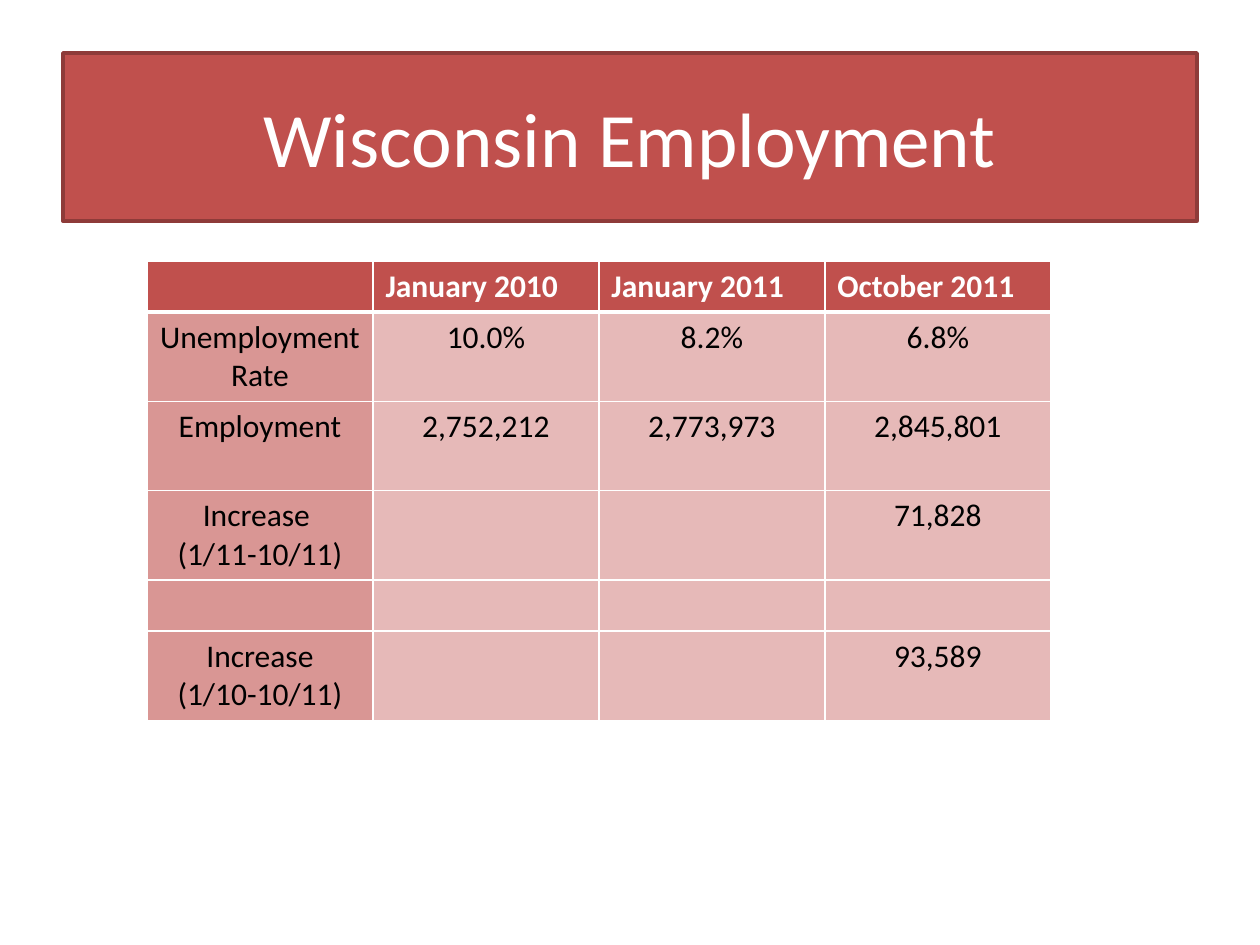
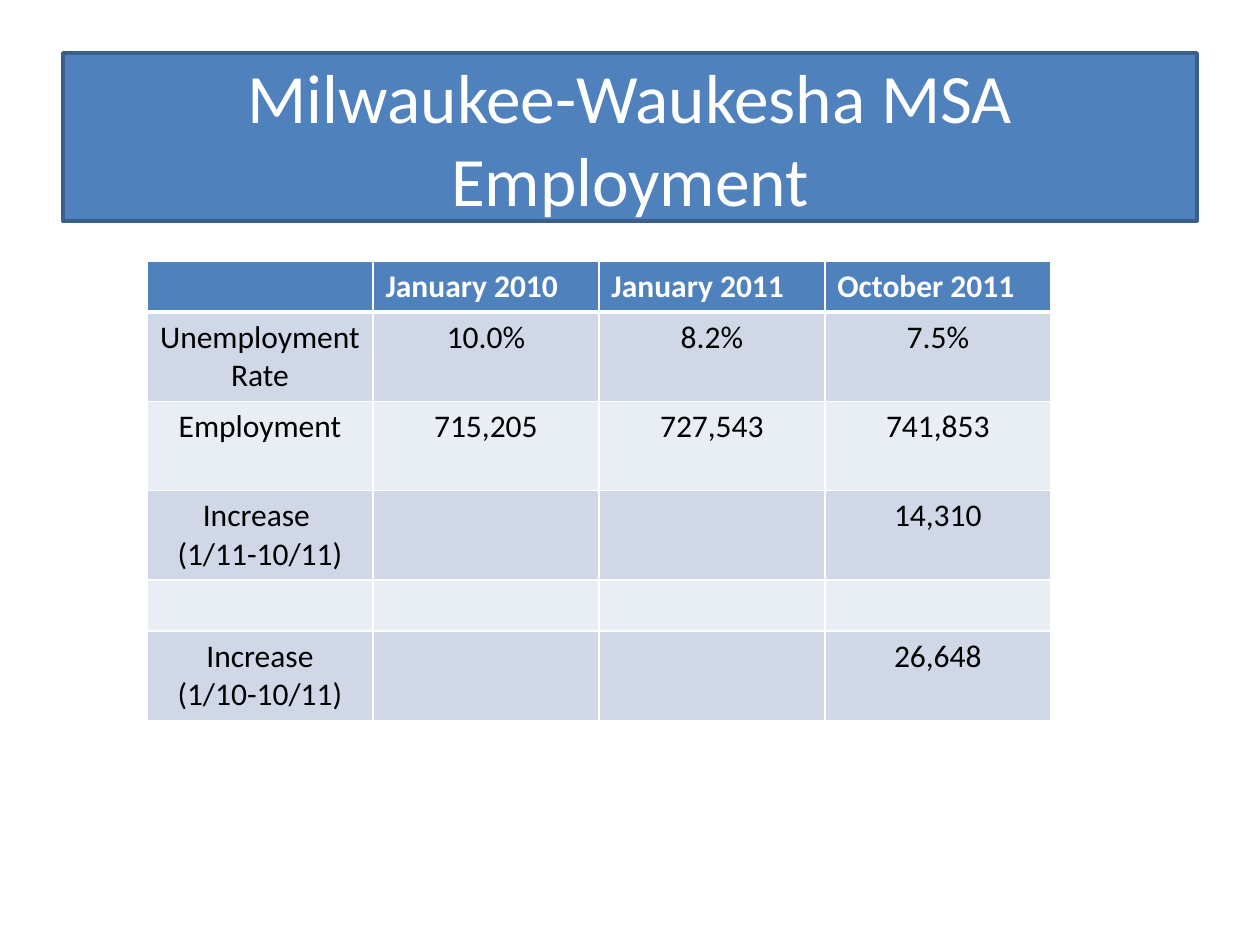
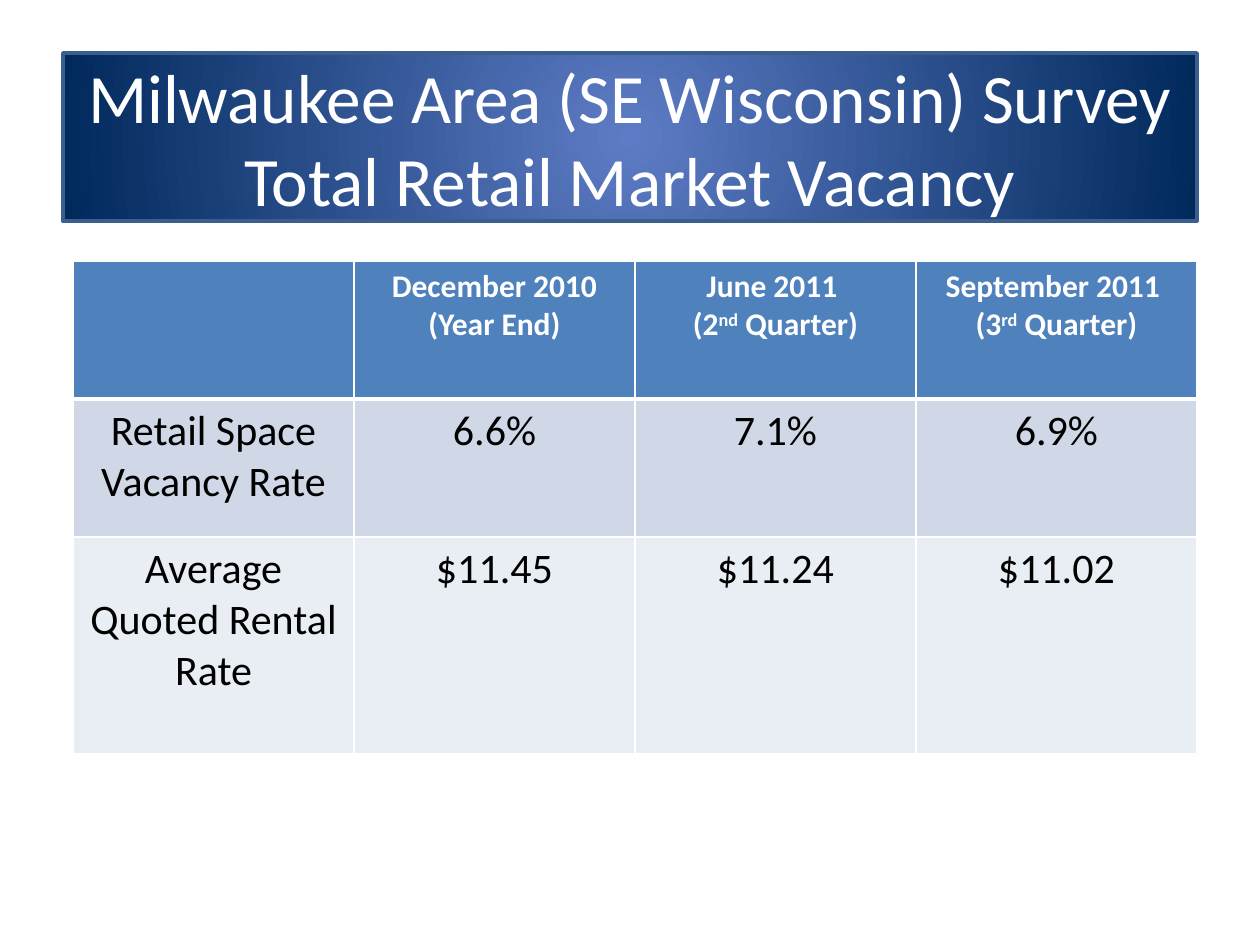
from dataclasses import dataclass
from typing import Optional

import lxml.etree
import pptx
import pptx.dml.color
import pptx.enum.text
import pptx.oxml.ns
import pptx.util

RGBColor = pptx.dml.color.RGBColor
Align = pptx.enum.text.PP_ALIGN
qn = pptx.oxml.ns.qn

WHITE = RGBColor(0xFF, 0xFF, 0xFF)
BLACK = RGBColor(0x00, 0x00, 0x00)
RED = RGBColor(0xC0, 0x50, 0x4D)
DARK_RED = RGBColor(0x8E, 0x3B, 0x39)
ROSE = RGBColor(0xD9, 0x96, 0x94)
PALE_ROSE = RGBColor(0xE6, 0xB9, 0xB8)
BLUE = RGBColor(0x4F, 0x81, 0xBD)
DARK_BLUE = RGBColor(0x3A, 0x5F, 0x8C)
MIST = RGBColor(0xD0, 0xD8, 0xE8)
PALE_MIST = RGBColor(0xE9, 0xED, 0xF4)
GLOW = RGBColor(0x5E, 0x7C, 0xC5)
NAVY = RGBColor(0x00, 0x29, 0x5C)

FONT = "Calibri"
PX_PER_INCH = 126
HEADER_SIZE = 18
TITLE_ONLY = 5
TABLE_TOP = 261
RAISE_MARK = "^"

Row = tuple[str, ...]


@dataclass(frozen=True)
class Box:
    left: int
    top: int
    width: int
    height: int


@dataclass(frozen=True)
class Scheme:
    header: RGBColor
    outline: RGBColor
    label_bands: tuple[RGBColor, ...]
    value_bands: tuple[RGBColor, ...]


@dataclass(frozen=True)
class DataTable:
    left: int
    width: int
    row_heights: tuple[int, ...]
    rows: tuple[Row, ...]
    body_size: int
    header_align: Align


@dataclass(frozen=True)
class Page:
    title: str
    title_size: float
    scheme: Scheme
    table: DataTable
    glow: Optional[tuple[RGBColor, RGBColor]] = None


TITLE_BOX = Box(63, 53, 1134, 168)
RED_SCHEME = Scheme(RED, DARK_RED, (ROSE,), (PALE_ROSE,))
BLUE_SCHEME = Scheme(BLUE, DARK_BLUE, (MIST, PALE_MIST), (MIST, PALE_MIST))


def px(length: int) -> pptx.util.Emu:
    return pptx.util.Emu(round(length * 914400 / PX_PER_INCH))


def employment_table(rates: Row, employed: Row, recent: str, total: str) -> DataTable:
    rows = (
        ("", "January 2010", "January 2011", "October 2011"),
        ("Unemployment Rate", *rates),
        ("Employment", *employed),
        ("Increase \n(1/11-10/11)", "", "", recent),
        ("", "", "", ""),
        ("Increase\n(1/10-10/11)", "", "", total),
    )
    return DataTable(147, 904, (51, 89, 89, 89, 51, 89), rows, 18, Align.LEFT)


RETAIL_TABLE = DataTable(
    73,
    1124,
    (138, 138, 217),
    (
        ("", "December 2010\n(Year End)", "June 2011 \n(2^nd^ Quarter)",
         "September 2011 \n(3^rd^ Quarter)"),
        ("Retail Space Vacancy Rate", "6.6%", "7.1%", "6.9%"),
        ("Average Quoted Rental Rate", "$11.45", "$11.24", "$11.02"),
    ),
    24,
    Align.CENTER,
)

PAGES = (
    Page(
        "Wisconsin Employment", 44, RED_SCHEME,
        employment_table(("10.0%", "8.2%", "6.8%"),
                         ("2,752,212", "2,773,973", "2,845,801"), "71,828", "93,589"),
    ),
    Page(
        "Milwaukee-Waukesha MSA Employment", 39.6, BLUE_SCHEME,
        employment_table(("10.0%", "8.2%", "7.5%"),
                         ("715,205", "727,543", "741,853"), "14,310", "26,648"),
    ),
    Page(
        "Milwaukee Area (SE Wisconsin) Survey Total Retail Market Vacancy", 39.6,
        BLUE_SCHEME, RETAIL_TABLE, (GLOW, NAVY),
    ),
)


def write(frame, text: str, size: float, color: RGBColor, bold: bool, align: Align) -> None:
    for line_index, line in enumerate(text.split("\n")):
        para = frame.add_paragraph() if line_index else frame.paragraphs[0]
        para.alignment = align
        for part_index, part in enumerate(line.split(RAISE_MARK)):
            if not part:
                continue
            span = para.add_run()
            span.text = part
            span.font.name = FONT
            span.font.size = pptx.util.Pt(size)
            span.font.bold = bold
            span.font.color.rgb = color
            if part_index % 2:
                span.font._element.set("baseline", "30000")


def fill_radial(fill, colors: tuple[RGBColor, RGBColor]) -> None:
    fill.gradient()
    for stop, color, position in zip(fill.gradient_stops, colors, (0, 1)):
        stop.color.rgb = color
        stop.position = position
    linear = next(fill._xPr.iter(qn("a:lin")))
    circle = lxml.etree.Element(qn("a:path"), {"path": "circle"})
    sides = dict.fromkeys("ltrb", "50000")
    lxml.etree.SubElement(circle, qn("a:fillToRect"), sides)
    linear.getparent().replace(linear, circle)


def draw_title(title, page: Page) -> None:
    title.left, title.top = px(TITLE_BOX.left), px(TITLE_BOX.top)
    title.width, title.height = px(TITLE_BOX.width), px(TITLE_BOX.height)
    if page.glow:
        fill_radial(title.fill, page.glow)
    else:
        title.fill.solid()
        title.fill.fore_color.rgb = page.scheme.header
    title.line.color.rgb = page.scheme.outline
    title.line.width = pptx.util.Pt(2)
    frame = title.text_frame
    frame.auto_size = pptx.enum.text.MSO_AUTO_SIZE.NONE
    frame.vertical_anchor = pptx.enum.text.MSO_ANCHOR.MIDDLE
    write(frame, page.title, page.title_size, WHITE, False, Align.CENTER)


def draw_borders(cell, row_index: int) -> None:
    properties = cell._tc.get_or_add_tcPr()
    widths = {"L": 1, "R": 1, "T": 3 if row_index == 1 else 1, "B": 1 if row_index else 3}
    for side, width in widths.items():
        border = lxml.etree.SubElement(
            properties, qn(f"a:ln{side}"), {"w": str(pptx.util.Pt(width))})
        paint = lxml.etree.SubElement(border, qn("a:solidFill"))
        lxml.etree.SubElement(paint, qn("a:srgbClr"), {"val": str(WHITE)})


def cell_color(scheme: Scheme, row_index: int, column_index: int) -> RGBColor:
    if row_index == 0:
        return scheme.header
    bands = scheme.value_bands if column_index else scheme.label_bands
    return bands[(row_index - 1) % len(bands)]


def draw_table(slide, data: DataTable, scheme: Scheme) -> None:
    column_count = len(data.rows[0])
    table = slide.shapes.add_table(
        len(data.rows), column_count, px(data.left), px(TABLE_TOP),
        px(data.width), px(sum(data.row_heights))).table
    table.first_row = False
    table.horz_banding = False
    for column in table.columns:
        column.width = px(data.width // column_count)
    for row_index, (row, height) in enumerate(zip(data.rows, data.row_heights)):
        table.rows[row_index].height = px(height)
        is_header = row_index == 0
        for column_index, text in enumerate(row):
            cell = table.cell(row_index, column_index)
            draw_borders(cell, row_index)
            cell.fill.solid()
            cell.fill.fore_color.rgb = cell_color(scheme, row_index, column_index)
            write(
                cell.text_frame, text,
                HEADER_SIZE if is_header else data.body_size,
                WHITE if is_header else BLACK, is_header,
                data.header_align if is_header else Align.CENTER)


def main() -> None:
    deck = pptx.Presentation()
    deck.slide_width, deck.slide_height = px(1260), px(945)
    for page in PAGES:
        slide = deck.slides.add_slide(deck.slide_layouts[TITLE_ONLY])
        draw_table(slide, page.table, page.scheme)
        draw_title(slide.shapes.title, page)
    deck.save("out.pptx")


if __name__ == "__main__":
    main()
